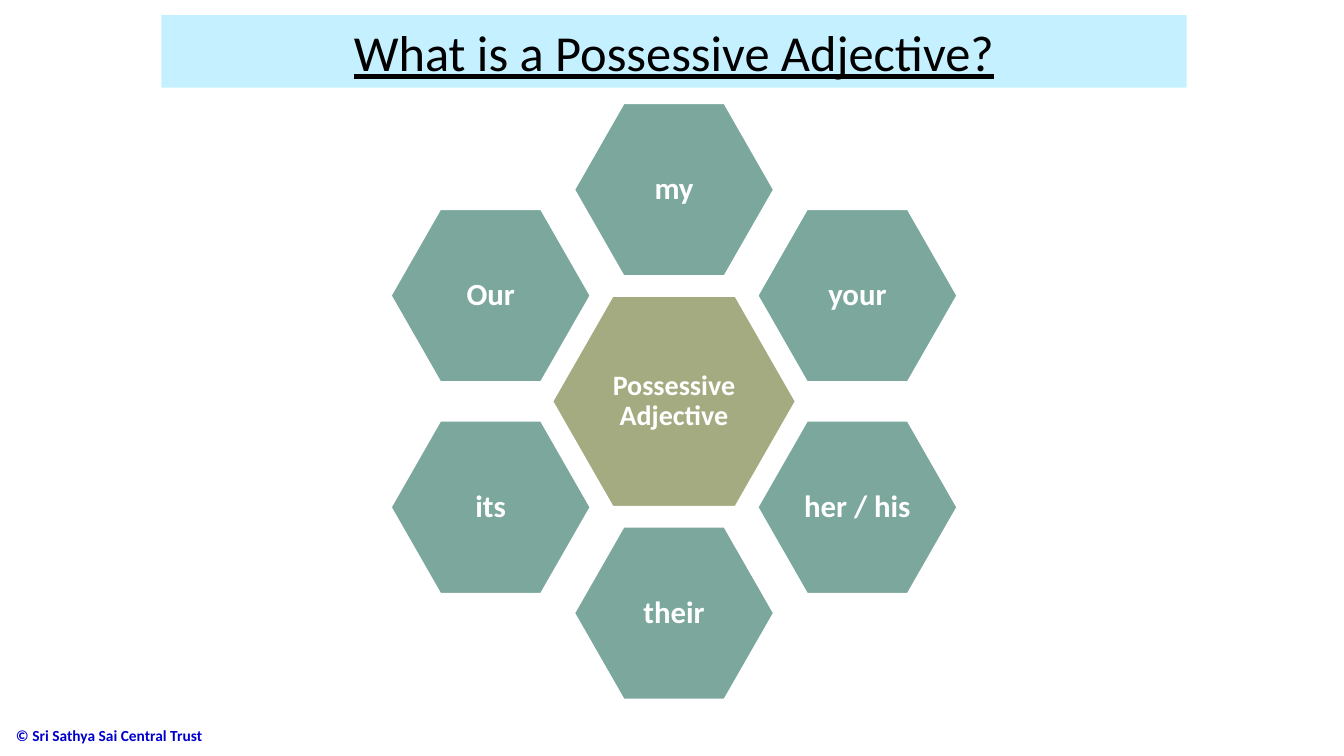
import math

import pptx
import pptx.dml.color
import pptx.enum.shapes
import pptx.enum.text
import pptx.util

RGBColor = pptx.dml.color.RGBColor
Shapes = pptx.enum.shapes.MSO_SHAPE
Align = pptx.enum.text.PP_ALIGN
Inches = pptx.util.Inches

WHITE = RGBColor(0xFF, 0xFF, 0xFF)
BLACK = RGBColor(0x00, 0x00, 0x00)
SKY = RGBColor(0xC5, 0xF0, 0xFF)
OLIVE = RGBColor(0xA5, 0xAB, 0x81)
TEAL = RGBColor(0x7B, 0xA7, 0x9D)
NAVY = RGBColor(0x00, 0x00, 0xCC)

WIDTH, HEIGHT = 13.33, 7.5
CENTER_X, CENTER_Y = WIDTH * 0.5015, HEIGHT * 0.531
RING_RADIUS = HEIGHT * 0.28
HEX_RATIO = 1.155  # width to height of a regular hexagon
HEX_INSET = 0.286  # corner inset as a share of the height

deck = pptx.Presentation()
deck.slide_width = Inches(WIDTH)
deck.slide_height = Inches(HEIGHT)
page = deck.slides.add_slide(deck.slide_layouts[6])


def write(box, text, size, color, align=Align.CENTER, bold=False,
          underline=False, spacing=1.0, margins=(0.1, 0.05)):
    frame = box.text_frame
    frame.word_wrap = True
    frame.vertical_anchor = pptx.enum.text.MSO_ANCHOR.MIDDLE
    frame.margin_left = frame.margin_right = Inches(margins[0])
    frame.margin_top = frame.margin_bottom = Inches(margins[1])
    para = frame.paragraphs[0]
    para.alignment = align
    para.line_spacing = spacing
    span = para.add_run()
    span.text = text
    span.font.name = "Calibri"
    span.font.size = pptx.util.Pt(size)
    span.font.color.rgb = color
    span.font.bold = bold
    span.font.underline = underline


def add_hexagon(text, center_x, center_y, height, fill, size):
    width = height * HEX_RATIO
    hexagon = page.shapes.add_shape(
        Shapes.HEXAGON, Inches(center_x - width / 2),
        Inches(center_y - height / 2), Inches(width), Inches(height))
    hexagon.adjustments[0] = HEX_INSET
    hexagon.shadow.inherit = False
    hexagon.fill.solid()
    hexagon.fill.fore_color.rgb = fill
    hexagon.line.color.rgb = WHITE
    hexagon.line.width = pptx.util.Pt(2)
    write(hexagon, text, size, WHITE, bold=True, spacing=0.9, margins=(0, 0))


footer = page.shapes.add_textbox(
    Inches(0.06), Inches(7.1), Inches(3.53), Inches(0.4))
write(footer, "© Sri Sathya Sai Central Trust", 11, NAVY,
      align=Align.LEFT, bold=True)

add_hexagon("Possessive Adjective", CENTER_X, CENTER_Y, HEIGHT * 0.28, OLIVE, 20)

# The words run clockwise from the top of the ring.
words = ["my", "your", "her / his", "their", "its", "Our"]
for index, word in enumerate(words):
    angle = math.tau * index / len(words)
    add_hexagon(word, CENTER_X + RING_RADIUS * math.sin(angle),
                CENTER_Y - RING_RADIUS * math.cos(angle),
                HEIGHT * 0.23, TEAL, 22)

title = page.shapes.add_shape(
    Shapes.RECTANGLE, Inches(1.6), Inches(0.15), Inches(10.17), Inches(0.72))
title.shadow.inherit = False
title.fill.solid()
title.fill.fore_color.rgb = SKY
title.line.fill.background()
write(title, "What is a Possessive Adjective?", 36, BLACK, underline=True)

deck.save("out.pptx")
